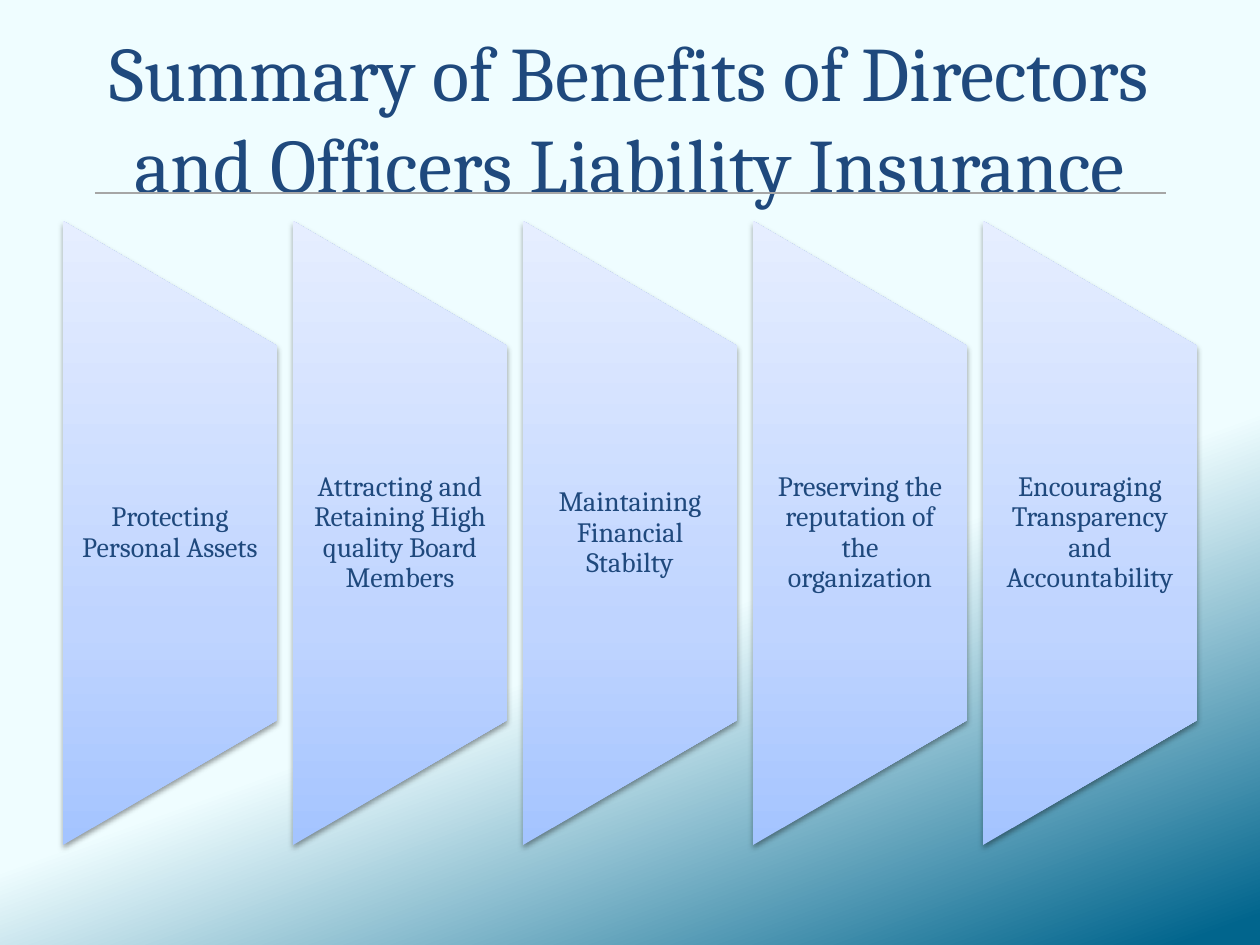
from lxml import etree
from pptx import Presentation
from pptx import util as u
from pptx.dml.color import RGBColor
from pptx.enum import shapes, text
from pptx.oxml.ns import qn

EMU_PER_PX = 914400 / 126
FONT = "Cambria"
COLORS = {"navy": "1F497D", "rule": "A6A6A6", "shadow": "000000",
          "teal": "01658D", "mist": "EFFDFF",
          "base": "A4C4FF", "middle": "BFD4FF", "top": "E6EEFF"}
BENEFITS = [
    "Protecting Personal Assets",
    "Attracting and Retaining High quality Board Members",
    "Maintaining Financial Stabilty",
    "Preserving the reputation of the organization",
    "Encouraging Transparency and Accountability",
]
PANEL_LEFT, PANEL_TOP, PANEL_W, PANEL_H, PANEL_STEP = 63, 221, 214, 624, 230


def px(n):
    return u.Emu(round(n * EMU_PER_PX))


def add_color(parent, name):
    return etree.SubElement(parent, qn("a:srgbClr"), val=COLORS[name])


def set_gradient(fill, stops, angle):
    """Fill with (percent, colour name) stops; angle is clockwise degrees."""
    fill.gradient()
    fill.gradient_angle = 360 - angle
    stop_list = fill.gradient_stops[0]._gs.getparent()
    stop_list.getparent().set("rotWithShape", "0")
    for old in list(stop_list):
        stop_list.remove(old)
    for percent, name in stops:
        gs = etree.SubElement(stop_list, qn("a:gs"), pos=str(percent * 1000))
        add_color(gs, name)


def add_soft_shadow(sp):
    sp.shadow.inherit = False
    effects = sp._element.spPr.find(qn("a:effectLst"))
    shadow = etree.SubElement(effects, qn("a:outerShdw"), blurRad="40000",
                              dist="20000", dir="5400000", rotWithShape="0")
    etree.SubElement(add_color(shadow, "shadow"), qn("a:alpha"), val="38000")


def add_text(slide, box, words, size, side=13, edge=6, spacing=1.0):
    """Centred text in a px box, with side and top/bottom insets in px."""
    tf = slide.shapes.add_textbox(*map(px, box)).text_frame
    tf.word_wrap = True
    tf.vertical_anchor = text.MSO_ANCHOR.MIDDLE
    tf.margin_left = tf.margin_right = px(side)
    tf.margin_top = tf.margin_bottom = px(edge)
    p = tf.paragraphs[0]
    p.alignment = text.PP_ALIGN.CENTER
    p.line_spacing = spacing
    r = p.add_run()
    r.text = words
    r.font.size = u.Pt(size)
    r.font.name = FONT
    r.font.color.rgb = RGBColor.from_string(COLORS["navy"])


def add_rule(slide, left, right, y):
    line = slide.shapes.add_connector(shapes.MSO_CONNECTOR.STRAIGHT,
                                      px(left), px(y), px(right), px(y))
    line.line.color.rgb = RGBColor.from_string(COLORS["rule"])
    line.line.width = u.Pt(1.5)
    etree.SubElement(line._element.spPr, qn("a:effectLst"))


def add_panel(slide, left, words):
    """A trapezoid turned on its side, with an upright label over it."""
    x = left + (PANEL_W - PANEL_H) / 2
    y = PANEL_TOP + (PANEL_H - PANEL_W) / 2
    sp = slide.shapes.add_shape(shapes.MSO_SHAPE.FLOWCHART_MANUAL_OPERATION,
                                px(x), px(y), px(PANEL_H), px(PANEL_W))
    sp.rotation = 270
    set_gradient(sp.fill, [(0, "base"), (35, "middle"), (100, "top")], 270)
    sp.line.fill.background()
    add_soft_shadow(sp)
    label_h = PANEL_H * 0.6
    label_top = PANEL_TOP + (PANEL_H - label_h) / 2
    add_text(slide, (left, label_top, PANEL_W, label_h), words, 16,
             side=14, edge=0, spacing=0.9)


def main():
    prs = Presentation()
    prs.slide_width, prs.slide_height = px(1260), px(945)
    slide = prs.slides.add_slide(prs.slide_layouts[6])
    set_gradient(slide.background.fill, [(2, "teal"), (38, "mist")], 250)
    add_text(slide, (63, 38, 1134, 157),
             "Summary of Benefits of Directors and Officers Liability Insurance", 44)
    add_rule(slide, 95, 1166, 193)
    for i, words in enumerate(BENEFITS):
        add_panel(slide, PANEL_LEFT + i * PANEL_STEP, words)
    prs.save("out.pptx")


if __name__ == "__main__":
    main()
